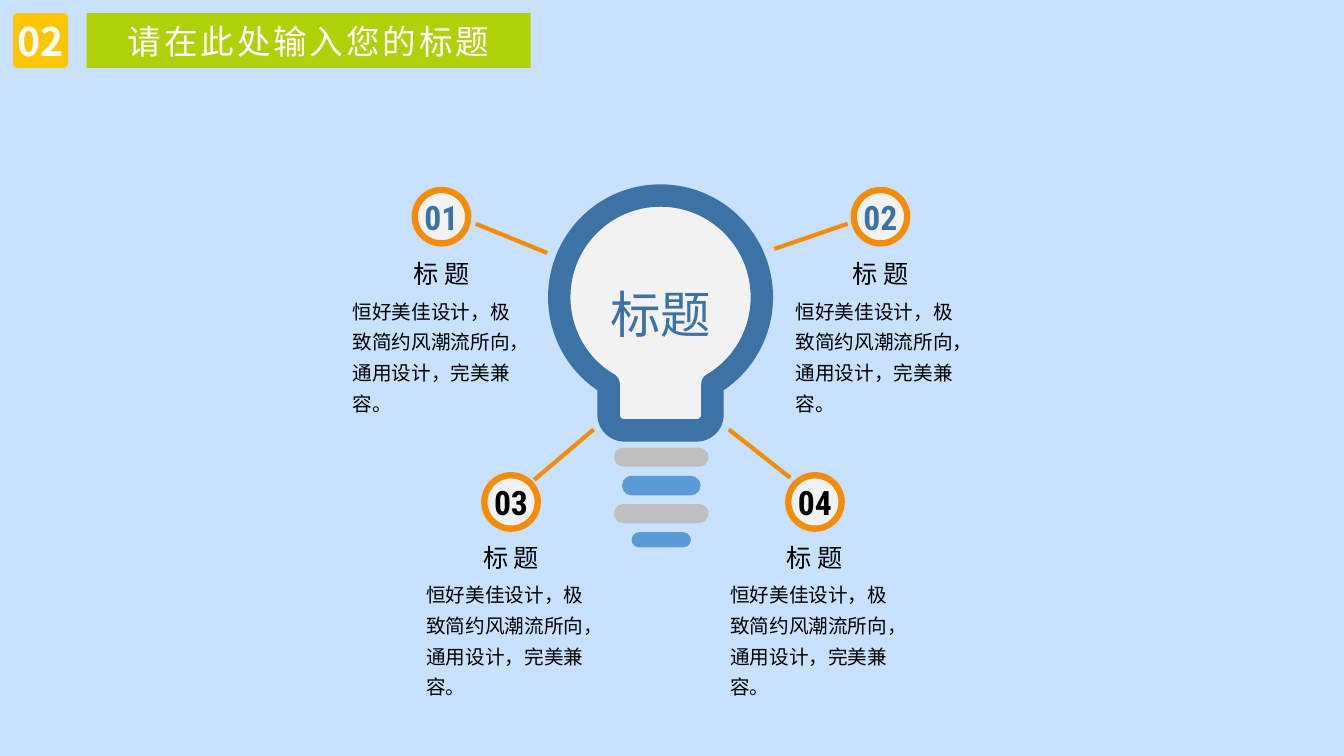
from dataclasses import dataclass

from lxml import etree
from pptx import Presentation
from pptx.dml.color import RGBColor
from pptx.enum.shapes import MSO_CONNECTOR, MSO_SHAPE
from pptx.enum.text import MSO_ANCHOR, MSO_AUTO_SIZE, PP_ALIGN
from pptx.oxml.ns import qn
from pptx.util import Inches, Pt

ROUNDED, OVAL = MSO_SHAPE.ROUNDED_RECTANGLE, MSO_SHAPE.OVAL
STRAIGHT = MSO_CONNECTOR.STRAIGHT
LEFT, CENTER = PP_ALIGN.LEFT, PP_ALIGN.CENTER
TOP, MIDDLE = MSO_ANCHOR.TOP, MSO_ANCHOR.MIDDLE
FIT_SHAPE, NO_FIT = MSO_AUTO_SIZE.SHAPE_TO_FIT_TEXT, MSO_AUTO_SIZE.NONE
TITLE_ONLY = 5

# Grid of square cells, 0.1 inch each
CELL = 0.1
COLS, ROWS = 133.33, 75


@dataclass(frozen=True)
class Theme:
    sky: str = "C7E1FF"
    yellow: str = "FDC602"
    green: str = "AFD109"
    orange: str = "F48C06"
    navy: str = "3C72A4"
    blue: str = "5B9BD5"
    grey: str = "BFBFBF"
    pale: str = "F2F2F2"
    white: str = "FFFFFF"
    black: str = "000000"
    cjk: str = "Noto Sans CJK SC"
    digits: str = "Roboto Condensed"
    latin: str = "Arial"
    bulb_size: int = 36
    section_size: int = 28
    title_size: int = 24
    heading_size: int = 18
    body_size: int = 14
    bulb_line: float = 16
    ring_line: float = 4.5
    ray_line: float = 3


THEME = Theme()

HEADING = "标 题"
BODY = "恒好美佳设计，极致简约风潮流所向，通用设计，完美兼容。"

# Number, its colour, ring corner, heading row, body column and width, ray ends
TOPICS = [
    ("01", THEME.navy, (41.15, 18.85), 25.75, (34, 18.5), (47.2, 22.2), (54.3, 25.1)),
    ("02", THEME.navy, (84.7, 18.85), 25.75, (77.95, 18.8), (84.1, 22.2), (76.8, 24.7)),
    ("03", THEME.black, (48.05, 47.15), 53.88, (41.3, 18.8), (53, 47.6), (58.9, 42.6)),
    ("04", THEME.black, (78.2, 47.15), 53.88, (71.45, 18.8), (78.4, 47.4), (72.3, 42.6)),
]

# Width, height and colour of each screw thread, top down
THREADS = [
    (9.4, 1.9, THEME.grey),
    (7.8, 1.95, THEME.blue),
    (9.4, 1.9, THEME.grey),
    (5.9, 1.5, THEME.blue),
]

# Right half of the bulb from its crown: curves have three points, lines one
BULB_X, BULB_TOP = 65.53, 19.4
BULB_HALF = [(0, 0), (5.55, 0), (10.05, 4.5), (10.05, 10.1),
             (10.05, 13.7), (8.1, 17), (5.15, 18.7),
             (5.15, 21.8),
             (5.15, 22.6), (4.45, 23.3), (3.6, 23.3)]
BULB_STEPS = [3, 3, 1, 3, 1, 3, 1, 3, 3]


def cells(*values):
    return [Inches(v * CELL) for v in values]


def color(code):
    return RGBColor.from_string(code)


def write(shape, text, size, ink, font=THEME.cjk, bold=False, align=CENTER,
          anchor=MIDDLE, line_spacing=None, tracking=0, inset=None, fit=NO_FIT):
    tf = shape.text_frame
    tf.word_wrap = True
    tf.auto_size = fit
    tf.vertical_anchor = anchor
    if inset is not None:
        tf.margin_left = tf.margin_right = tf.margin_top = tf.margin_bottom = inset
    p = tf.paragraphs[0]
    p.alignment = align
    if line_spacing:
        p.line_spacing = line_spacing
    r = p.add_run()
    r.text = text
    r.font.name, r.font.size, r.font.bold = font, Pt(size), bold
    r.font.color.rgb = color(ink)
    # East Asian font and letter spacing
    props = r.font._element
    etree.SubElement(props, qn("a:ea")).set("typeface", THEME.cjk)
    if tracking:
        props.set("spc", str(tracking * 100))


def paint(sp, fill, line=None, width=0):
    sp.fill.solid()
    sp.fill.fore_color.rgb = color(fill)
    if line:
        sp.line.color.rgb = color(line)
        sp.line.width = Pt(width)
    else:
        sp.line.fill.background()
    sp.shadow.inherit = False


def add_block(slide, kind, box, fill, line=None, width=0, corner=None):
    sp = slide.shapes.add_shape(kind, *cells(*box))
    paint(sp, fill, line, width)
    if corner is not None:
        sp.adjustments[0] = corner
    return sp


def add_label(slide, box, text, size, **style):
    sp = slide.shapes.add_textbox(*cells(*box))
    write(sp, text, size, THEME.black, THEME.latin, anchor=TOP, fit=FIT_SHAPE, **style)


def add_ray(slide, start, end):
    ray = slide.shapes.add_connector(STRAIGHT, *cells(*start, *end))
    ray.line.color.rgb = color(THEME.orange)
    ray.line.width = Pt(THEME.ray_line)
    etree.SubElement(ray._element.spPr, qn("a:effectLst"))


def bend(sp, steps):
    """Join each group of three line points into one Bézier curve."""
    lines = iter(list(sp._element.iter(qn("a:lnTo"))))
    for count in steps:
        first = next(lines)
        if count == 3:
            first.tag = qn("a:cubicBezTo")
            for line in (next(lines), next(lines)):
                first.append(line[0])
                line.getparent().remove(line)


def add_bulb(slide):
    # Right half, then its mirror image back to the crown
    points = BULB_HALF + [(-x, y) for x, y in reversed(BULB_HALF)]
    outline = [cells(BULB_X + x, BULB_TOP + y) for x, y in points]
    builder = slide.shapes.build_freeform(*outline[0])
    builder.add_line_segments(outline[1:], close=True)
    sp = builder.convert_to_shape()
    bend(sp, BULB_STEPS)
    paint(sp, THEME.pale, THEME.navy, THEME.bulb_line)
    etree.SubElement(sp.line._get_or_add_ln(), qn("a:round"))
    write(sp, "标题", THEME.bulb_size, THEME.navy)

    # Screw threads under the neck
    for i, (width, height, fill) in enumerate(THREADS):
        box = (BULB_X + 0.07 - width / 2, 44.4 + 2.8 * i, width, height)
        add_block(slide, ROUNDED, box, fill, corner=0.5)


def add_topic(slide, number, ink, corner, row, body, start, end):
    x, y = corner
    body_x, body_width = body
    ring = add_block(slide, OVAL, (x, y, 5.3, 5.3), THEME.pale,
                     THEME.orange, THEME.ring_line)
    write(ring, number, THEME.title_size, ink, THEME.digits, bold=True, inset=0)
    add_ray(slide, start, end)
    add_label(slide, (x - 4, row, 13.3, 3.4), HEADING,
              THEME.heading_size, line_spacing=0.8)
    add_label(slide, (body_x, row + 2.8, body_width, 13.3), BODY,
              THEME.body_size, align=LEFT, line_spacing=1.3)


def add_header(slide):
    badge = add_block(slide, ROUNDED, (1.3, 1.3, 5.45, 5.45), THEME.yellow, corner=0.08)
    write(badge, "02", THEME.section_size, THEME.white, bold=True, inset=0)
    # The title itself is the rounded bar
    title = slide.shapes.title
    title.left, title.top, title.width, title.height = cells(8.6, 1.3, 44.05, 5.45)
    geometry = etree.SubElement(title._element.spPr, qn("a:prstGeom"), prst="roundRect")
    guides = etree.SubElement(geometry, qn("a:avLst"))
    etree.SubElement(guides, qn("a:gd"), name="adj", fmla="val 9100")
    paint(title, THEME.green)
    write(title, "请在此处输入您的标题", THEME.title_size, THEME.white, tracking=2)


def main():
    prs = Presentation()
    prs.slide_width, prs.slide_height = cells(COLS, ROWS)
    slide = prs.slides.add_slide(prs.slide_layouts[TITLE_ONLY])
    slide.background.fill.solid()
    slide.background.fill.fore_color.rgb = color(THEME.sky)
    add_bulb(slide)
    for topic in TOPICS:
        add_topic(slide, *topic)
    add_header(slide)
    prs.save("out.pptx")


if __name__ == "__main__":
    main()
